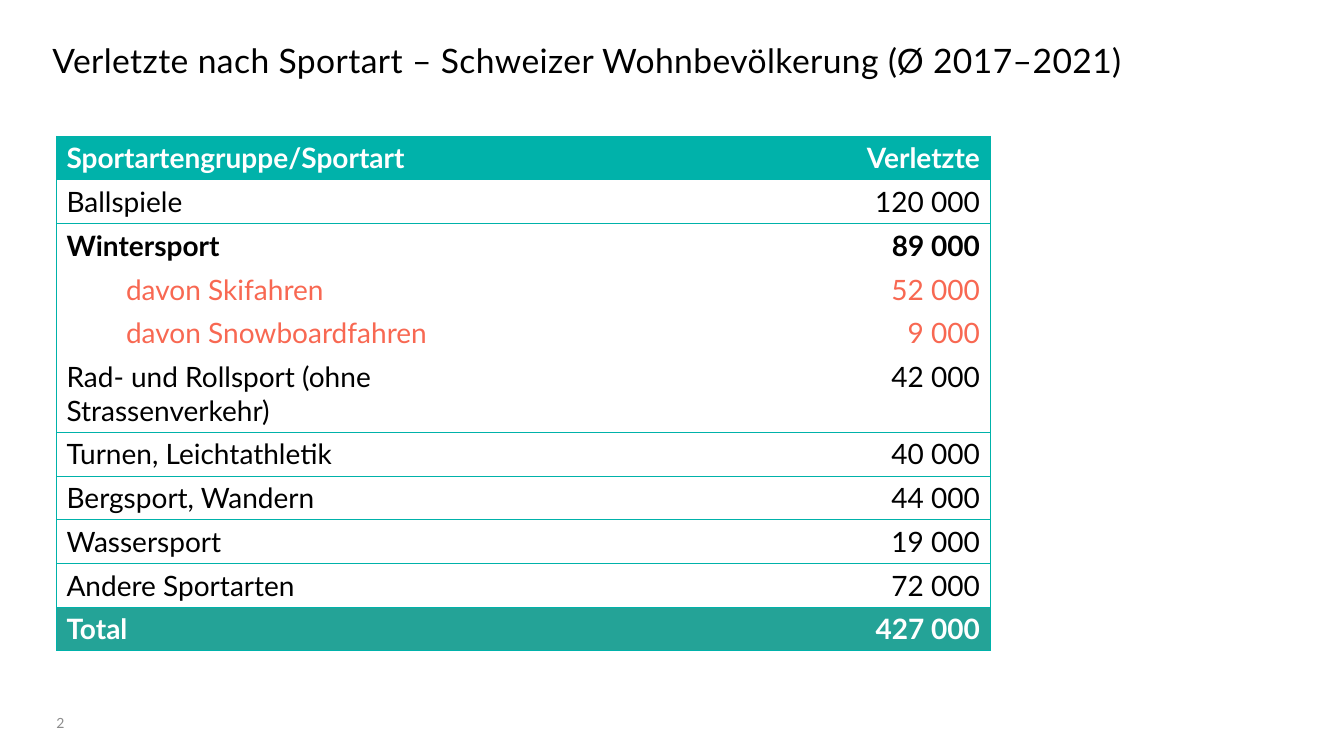
from pptx import Presentation
from pptx.dml.color import RGBColor
from pptx.enum.text import PP_ALIGN
from pptx.oxml.ns import qn
from pptx.util import Inches, Pt
from lxml.etree import SubElement

COLORS = {"black": "000000", "white": "FFFFFF", "grey": "8C8C8C",
          "teal": "00B2AA", "total": "24A397", "coral": "F86852"}
PLAIN = {"color": "black", "bold": False}
STRONG = {"color": "black", "bold": True}
BAND = {"color": "white", "bold": True}
DETAIL = {"color": "coral", "bold": False}
INJURIES = [
    ("Sportartengruppe/Sportart", "Verletzte", BAND, "teal"),
    ("Ballspiele", "120 000", PLAIN, None),
    ("Wintersport", "89 000", STRONG, None),
    ("\tdavon Skifahren", "52 000", DETAIL, None),
    ("\tdavon Snowboardfahren", "9 000", DETAIL, None),
    ("Rad- und Rollsport (ohne Strassenverkehr)", "42 000", PLAIN, None),
    ("Turnen, Leichtathletik", "40 000", PLAIN, None),
    ("Bergsport, Wandern", "44 000", PLAIN, None),
    ("Wassersport", "19 000", PLAIN, None),
    ("Andere Sportarten", "72 000", PLAIN, None),
    ("Total", "427 000", BAND, "total"),
]
UNRULED_BELOW = {2, 3, 4}


def write(para, text, size, color, bold=False):
    """Add one formatted run to a paragraph and return it."""
    span = para.add_run()
    span.text = text
    for name, value in {"name": "Lato", "size": Pt(size), "bold": bold}.items():
        setattr(span.font, name, value)
    span.font.color.rgb = RGBColor.from_string(COLORS[color])
    return span


def add_label(page, box, text, size, color):
    """Place a text box without margins and return its run."""
    frame = page.shapes.add_textbox(*map(Inches, box)).text_frame
    margins = ("margin_left", "margin_top", "margin_right", "margin_bottom")
    for name, value in {**dict.fromkeys(margins, 0), "word_wrap": True}.items():
        setattr(frame, name, value)
    return write(frame.paragraphs[0], text, size, color)


def add_title(page, box, text):
    """Place the slightly spaced slide title."""
    span = add_label(page, box, text, 24, "black")
    span.font._element.set("spc", "30")


def rule_cell(cell, sides):
    """Draw teal borders on the given sides and clear the others."""
    properties = cell._tc.get_or_add_tcPr()
    for side in "LRTB":
        line = SubElement(properties, qn(f"a:ln{side}"), w=str(Pt(0.5)))
        if side in sides:
            fill = SubElement(line, qn("a:solidFill"))
            SubElement(fill, qn("a:srgbClr"), val=COLORS["teal"])
        else:
            SubElement(line, qn("a:noFill"))


def add_tab(para, position):
    """Set a left tab stop on a paragraph."""
    stops = SubElement(para._p.get_or_add_pPr(), qn("a:tabLst"))
    SubElement(stops, qn("a:tab"), pos=str(Inches(position)), algn="l")


def add_injury_table(page, box, widths):
    """Place the table of injuries by sport."""
    table = page.shapes.add_table(len(INJURIES), len(widths), *map(Inches, box)).table
    for column, width in zip(table.columns, widths):
        column.width = Inches(width)
    for index, (sport, count, style, band) in enumerate(INJURIES):
        table.rows[index].height = Inches(box[3] / len(INJURIES))
        above = "" if index - 1 in UNRULED_BELOW else "T"
        below = "" if index in UNRULED_BELOW else "B"
        for cell, text, edge in zip(table.rows[index].cells, (sport, count), "LR"):
            rule_cell(cell, edge + above + below)
            if band:
                cell.fill.solid()
                cell.fill.fore_color.rgb = RGBColor.from_string(COLORS[band])
            else:
                cell.fill.background()
            para = cell.text_frame.paragraphs[0]
            para.alignment = PP_ALIGN.RIGHT if edge == "R" else PP_ALIGN.LEFT
            if text.startswith("\t"):
                add_tab(para, 0.59)
            write(para, text, 20, **style)


def main():
    """Build the slide and save the deck."""
    deck = Presentation()
    deck.slide_width, deck.slide_height = Inches(13.33), Inches(7.5)
    page = deck.slides.add_slide(deck.slide_layouts[6])
    add_title(page, (0.52, 0.4, 12.28, 0.35),
              "Verletzte nach Sportart – Schweizer Wohnbevölkerung (Ø 2017–2021)")
    add_injury_table(page, (0.56, 1.35, 9.26, 4.51), (4.62, 4.64))
    add_label(page, (0.56, 7.09, 0.89, 0.18), "2", 10, "grey")
    deck.save("out.pptx")


if __name__ == "__main__":
    main()
